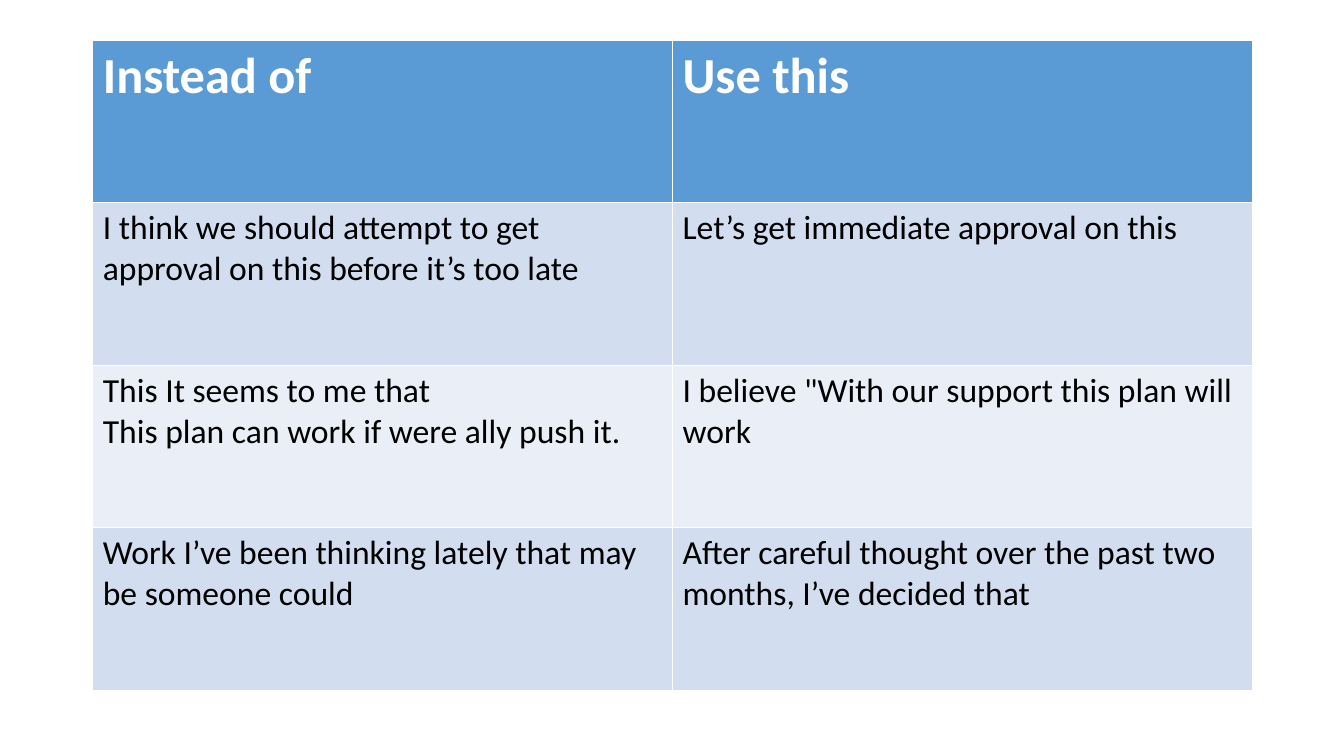
from dataclasses import dataclass

from pptx import Presentation
from pptx.dml.color import RGBColor
from pptx.table import Table, _Cell
from pptx.util import Inches, Pt

BLANK_LAYOUT = 6
FONT_NAME = "Calibri"
COLOURS = {
    "header": "5B9BD5",
    "odd_band": "D2DEEF",
    "even_band": "EAEFF7",
    "header_text": "FFFFFF",
    "body_text": "000000",
}


@dataclass(frozen=True)
class CellStyle:
    fill: str
    text: str
    size: int
    bold: bool


@dataclass(frozen=True)
class Phrase:
    instead_of: str
    use_this: str


HEADER_STYLE = CellStyle("header", "header_text", 36, True)
BAND_STYLES = (
    CellStyle("odd_band", "body_text", 24, False),
    CellStyle("even_band", "body_text", 24, False),
)
HEADING = Phrase("Instead of", "Use this")
PHRASES = (
    Phrase(
        "I think we should attempt to get approval on this before it’s too late",
        "Let’s get immediate approval on this",
    ),
    Phrase(
        "This It seems to me that\nThis plan can work if were ally push it.",
        'I believe "With our support this plan will work',
    ),
    Phrase(
        "Work I’ve been thinking lately that may be someone could",
        "After careful thought over the past two months, I’ve decided that",
    ),
)


def colour(name: str) -> RGBColor:
    return RGBColor.from_string(COLOURS[name])


def write_cell(cell: _Cell, text: str, style: CellStyle) -> None:
    cell.fill.solid()
    cell.fill.fore_color.rgb = colour(style.fill)
    cell.text_frame.text = text
    for paragraph in cell.text_frame.paragraphs:
        font = paragraph.font
        font.name = FONT_NAME
        font.size = Pt(style.size)
        font.bold = style.bold
        font.color.rgb = colour(style.text)


def write_row(table: Table, row: int, phrase: Phrase, style: CellStyle) -> None:
    write_cell(table.cell(row, 0), phrase.instead_of, style)
    write_cell(table.cell(row, 1), phrase.use_this, style)


def main() -> None:
    presentation = Presentation()
    presentation.slide_width = Inches(13.33)
    presentation.slide_height = Inches(7.5)
    slide = presentation.slides.add_slide(presentation.slide_layouts[BLANK_LAYOUT])

    table = slide.shapes.add_table(
        len(PHRASES) + 1, 2, Inches(0.92), Inches(0.4), Inches(11.5), Inches(6.45)
    ).table
    write_row(table, 0, HEADING, HEADER_STYLE)
    for index, phrase in enumerate(PHRASES):
        write_row(table, index + 1, phrase, BAND_STYLES[index % len(BAND_STYLES)])

    presentation.save("out.pptx")


if __name__ == "__main__":
    main()
